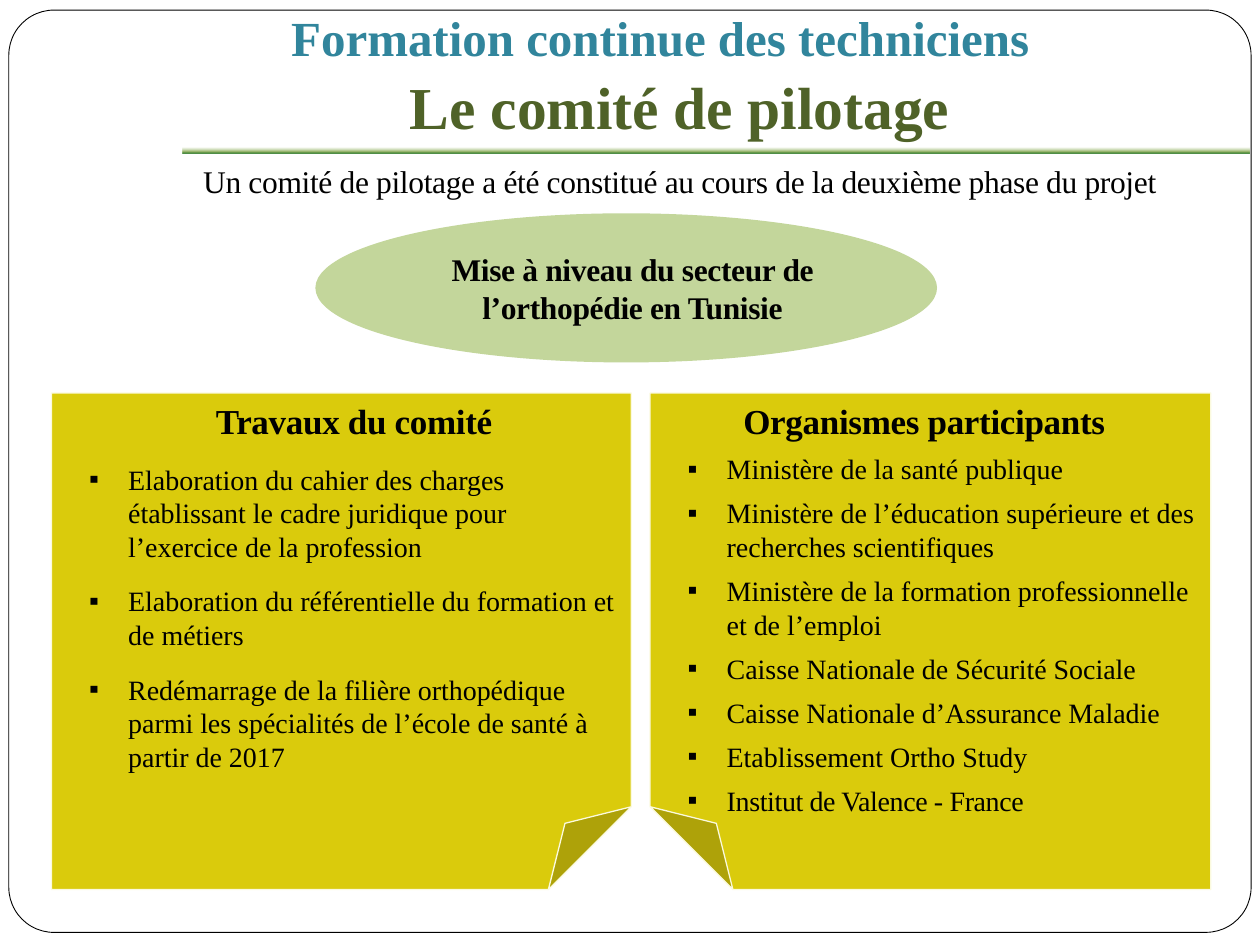
from lxml.etree import SubElement
from pptx import Presentation
from pptx.dml.color import RGBColor
from pptx.enum.shapes import MSO_SHAPE
from pptx.enum.text import MSO_ANCHOR, PP_ALIGN
from pptx.oxml import parse_xml
from pptx.oxml.ns import nsdecls, qn
from pptx.util import Inches, Pt

FONT = "Times New Roman"
TIGHT = -20  # letter spacing in hundredths of a point


def color(code):
    return RGBColor.from_string(code)


def add_shape(slide, kind, box, fill, line=None, width=1):
    shape = slide.shapes.add_shape(kind, *map(Inches, box))
    shape.shadow.inherit = False
    shape.fill.solid()
    shape.fill.fore_color.rgb = color(fill)
    if line:
        shape.line.color.rgb = color(line)
        shape.line.width = Pt(width)
    else:
        shape.line.fill.background()
    return shape


def set_text(para, text, size, ink="000000", bold=False, spacing=0,
             align=PP_ALIGN.CENTER, left=0, right=0):
    """Add one run; left and right are paragraph margins in inches."""
    para.alignment = align
    props = para._p.get_or_add_pPr()
    props.set("marL", str(Inches(left)))
    props.set("marR", str(Inches(right)))
    run = para.add_run()
    run.text = text
    run.font.name = FONT
    run.font.size = Pt(size)
    run.font.bold = bold
    run.font.color.rgb = color(ink)
    if spacing:
        run._r.get_or_add_rPr().set("spc", str(spacing))


def add_bullet(para, text, gap, spacing=0):
    props = para._p.get_or_add_pPr()
    SubElement(props, qn("a:buFont")).set("typeface", FONT)
    SubElement(props, qn("a:buChar")).set("char", "▪")
    set_text(para, text, 16, spacing=spacing, align=PP_ALIGN.LEFT, left=0.51)
    props.set("indent", str(Inches(-0.31)))
    para.space_before = Pt(gap)


def add_label(slide, box, text, size, **style):
    frame = slide.shapes.add_textbox(*map(Inches, box)).text_frame
    frame.word_wrap = True
    set_text(frame.paragraphs[0], text, size, **style)


def add_frame(slide, box):
    frame = add_shape(slide, MSO_SHAPE.ROUNDED_RECTANGLE, box,
                      "FFFFFF", "000000", 0.5)
    frame.adjustments[0] = 0.049


def add_rule(slide, box):
    """Draw the bar under the title, fading from clear to green."""
    rule = add_shape(slide, MSO_SHAPE.RECTANGLE, box, "156B13")
    props = rule._element.spPr
    props.replace(props.find(qn("a:solidFill")), parse_xml(
        f'<a:gradFill {nsdecls("a")} rotWithShape="1"><a:gsLst>'
        '<a:gs pos="0"><a:srgbClr val="FFFFFF"><a:alpha val="78000"/></a:srgbClr></a:gs>'
        '<a:gs pos="65000"><a:srgbClr val="9CB86E"/></a:gs>'
        '<a:gs pos="100000"><a:srgbClr val="156B13"/></a:gs>'
        '</a:gsLst><a:lin ang="5400000" scaled="0"/></a:gradFill>'))


def add_theme(slide, box, text):
    oval = add_shape(slide, MSO_SHAPE.OVAL, box, "C3D69B", "C3D69B")
    frame = oval.text_frame
    frame.word_wrap = True
    frame.vertical_anchor = MSO_ANCHOR.MIDDLE
    set_text(frame.paragraphs[0], text, 18, bold=True, spacing=TIGHT, left=0.1)


def add_panel(slide, box, title, items, gap, left=0, right=0, flip=False):
    panel = add_shape(slide, MSO_SHAPE.FOLDED_CORNER, box,
                      "DACB0C", "FBFADE", 0.75)
    if flip:
        panel._element.spPr.find(qn("a:xfrm")).set("flipH", "1")
    frame = panel.text_frame
    frame.word_wrap = True
    frame.vertical_anchor = MSO_ANCHOR.TOP
    set_text(frame.paragraphs[0], title, 20, bold=True, spacing=TIGHT,
             left=left, right=right)
    for text, spacing in items:
        add_bullet(frame.add_paragraph(), text, gap, spacing)


def main():
    deck = Presentation()
    deck.slide_width, deck.slide_height = Inches(10), Inches(7.5)
    slide = deck.slides.add_slide(deck.slide_layouts[6])

    add_frame(slide, (0.07, 0.08, 9.86, 7.32))
    add_rule(slide, (1.45, 1.17, 8.47, 0.05))
    add_label(slide, (1.49, 0.01, 7.5, 0.57),
              "Formation continue des techniciens", 28, ink="31859C", bold=True)
    add_label(slide, (1.92, 0.51, 6.95, 0.67),
              "Le comité de pilotage", 34, ink="4F6228", bold=True)
    add_label(slide, (0.69, 1.24, 9.21, 0.4),
              "Un comité de pilotage a été constitué au cours de la deuxième "
              "phase du projet", 18, spacing=TIGHT, left=0.2)
    add_theme(slide, (2.51, 1.7, 4.92, 1.17),
              "Mise à niveau du secteur de l’orthopédie en Tunisie")

    top, height = 3.12, 3.94
    add_panel(slide, (0.41, top, 4.6, height), "Travaux du comité", [
        ("Elaboration du cahier des charges établissant le cadre juridique "
         "pour l’exercice de la profession", 0),
        ("Elaboration du référentielle du formation et de métiers", 0),
        ("Redémarrage de la filière orthopédique parmi les spécialités de "
         "l’école de santé à partir de 2017", 0),
    ], gap=12, left=0.2)
    add_panel(slide, (5.16, top, 4.45, height), "Organismes participants", [
        ("Ministère de la santé publique", 0),
        ("Ministère de l’éducation supérieure et des recherches "
         "scientifiques", 0),
        ("Ministère de la formation professionnelle et de l’emploi", 0),
        ("Caisse Nationale de Sécurité Sociale", 0),
        ("Caisse Nationale d’Assurance Maladie", 0),
        ("Etablissement Ortho Study", 0),
        ("Institut de Valence - France", TIGHT),
    ], gap=6, right=0.1, flip=True)

    deck.save("out.pptx")


if __name__ == "__main__":
    main()
